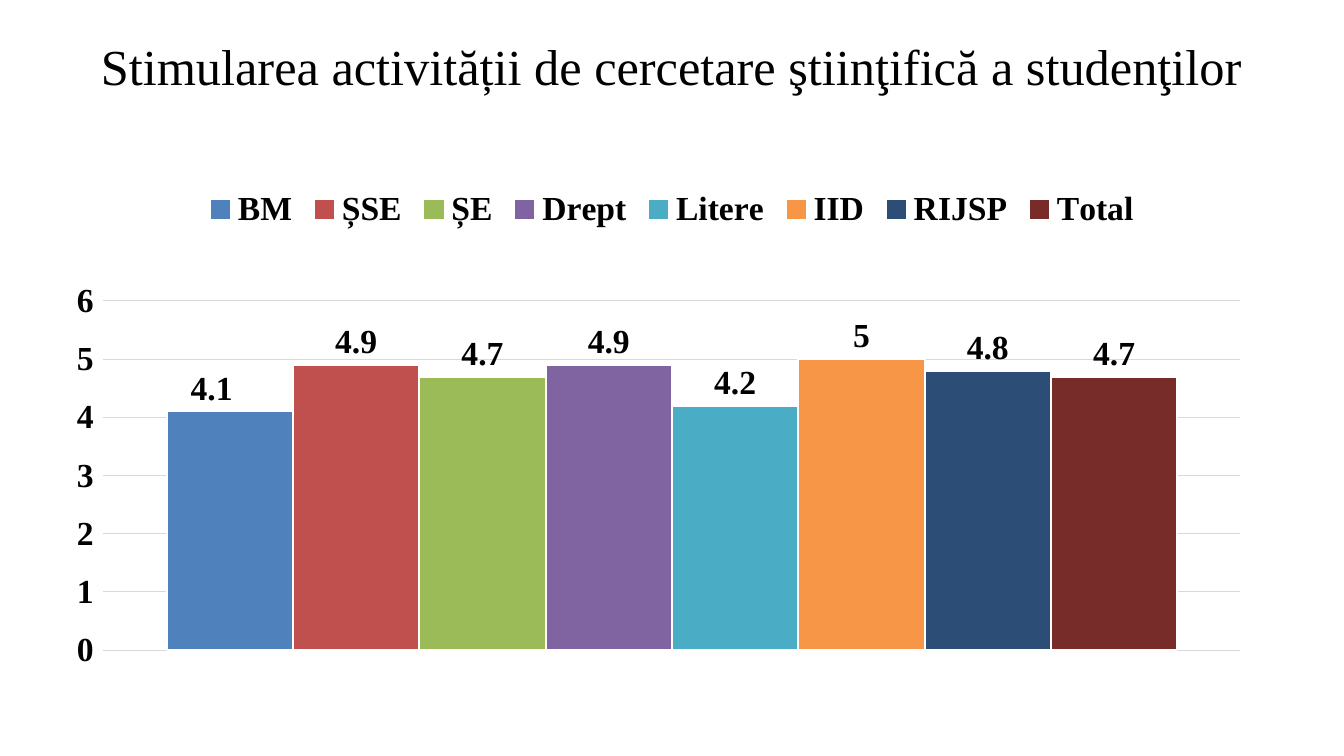
import pptx
import pptx.chart.data
import pptx.dml.color
import pptx.enum.chart
import pptx.enum.text
import pptx.oxml
import pptx.oxml.ns
import pptx.util

SLIDE_WIDTH = pptx.util.Inches(13.33)
SLIDE_HEIGHT = pptx.util.Inches(7.5)
FONT = "Times New Roman"
COLORS = {
    "text": "000000", "grid": "D9D9D9", "border": "FFFFFF",
    "BM": "4F81BD", "ȘSE": "C0504D", "ȘE": "9BBB59", "Drept": "8064A2",
    "Litere": "4BACC6", "IID": "F79646", "RIJSP": "2C4D75", "Total": "772C2A",
}
SCORES = {"BM": 4.1, "ȘSE": 4.9, "ȘE": 4.7, "Drept": 4.9,
          "Litere": 4.2, "IID": 5, "RIJSP": 4.8, "Total": 4.7}


def color(name):
    return pptx.dml.color.RGBColor.from_string(COLORS[name])


def area(left, top, width, height):
    """Turn shares of the slide into lengths."""
    return (int(left * SLIDE_WIDTH), int(top * SLIDE_HEIGHT),
            int(width * SLIDE_WIDTH), int(height * SLIDE_HEIGHT))


def style_font(font, size, bold):
    font.name = FONT
    font.size = pptx.util.Pt(size)
    font.bold = bold
    font.color.rgb = color("text")


def layout_xml(**values):
    """Build a manual layout element for a part of the chart."""
    parts = "".join(f'<c:{tag} val="{value}"/>' for tag, value in values.items())
    return pptx.oxml.parse_xml(
        f'<c:layout {pptx.oxml.ns.nsdecls("c")}>'
        f"<c:manualLayout>{parts}</c:manualLayout></c:layout>")


def add_title(slide, text):
    title = slide.shapes.title
    title.left, title.top, title.width, title.height = area(0.05, 0.04, 0.9, 1 / 6)
    frame = title.text_frame
    frame.word_wrap = True
    frame.auto_size = pptx.enum.text.MSO_AUTO_SIZE.NONE
    frame.vertical_anchor = pptx.enum.text.MSO_ANCHOR.TOP
    paragraph = frame.paragraphs[0]
    paragraph.alignment = pptx.enum.text.PP_ALIGN.CENTER
    run = paragraph.add_run()
    run.text = text
    style_font(run.font, 36, False)


def style_axes(chart):
    chart.category_axis.visible = False
    axis = chart.value_axis
    axis.minimum_scale, axis.maximum_scale, axis.major_unit = 0, 6, 1
    axis.major_tick_mark = pptx.enum.chart.XL_TICK_MARK.OUTSIDE
    axis.format.line.fill.background()
    axis.major_gridlines.format.line.color.rgb = color("grid")
    axis.major_gridlines.format.line.width = pptx.util.Pt(0.75)
    style_font(axis.tick_labels.font, 24, True)


def style_series(series):
    series.format.fill.solid()
    series.format.fill.fore_color.rgb = color(series.name)
    series.format.line.color.rgb = color("border")
    series.format.line.width = pptx.util.Pt(1.5)
    labels = series.data_labels
    labels.show_value = True
    labels.position = pptx.enum.chart.XL_LABEL_POSITION.OUTSIDE_END
    style_font(labels.font, 24, True)


def shift_first_label(chart, series, share):
    """Move a series' label sideways by a share of the chart's width."""
    label = series.points[0].data_label
    style_font(label.font, 24, True)
    label.position = pptx.enum.chart.XL_LABEL_POSITION.OUTSIDE_END
    index = chart.element.xpath(".//c:dLbl/c:idx")[0] if hasattr(chart, "element") \
        else chart._chartSpace.xpath(".//c:dLbl/c:idx")[0]
    index.addnext(layout_xml(x=share, y=0))


def add_score_chart(slide):
    data = pptx.chart.data.CategoryChartData()
    data.categories = ["1"]
    for name, score in SCORES.items():
        data.add_series(name, [score])
    chart = slide.shapes.add_chart(
        pptx.enum.chart.XL_CHART_TYPE.COLUMN_CLUSTERED,
        *area(0.05, 0.233, 0.9, 0.66), data).chart
    chart.has_title = False
    style_font(chart.font, 24, True)
    style_axes(chart)

    # Columns and their values
    plot = chart.plots[0]
    plot.gap_width = 100
    plot.overlap = 0
    plot.vary_by_categories = False
    for series in plot.series:
        style_series(series)
    shift_first_label(chart, plot.series[0], -0.015)

    # Legend above the columns
    chart.has_legend = True
    chart.legend.position = pptx.enum.chart.XL_LEGEND_POSITION.TOP
    chart.legend.include_in_layout = False
    style_font(chart.legend.font, 24, True)

    # Plot area
    plot_area = chart._chartSpace.xpath(".//c:plotArea")[0]
    for old_layout in plot_area.xpath("./c:layout"):
        plot_area.remove(old_layout)
    plot_area.insert(0, layout_xml(layoutTarget="inner", xMode="edge", yMode="edge",
                                   x=0.03, y=0.25, w=0.94, h=0.7))


def main():
    presentation = pptx.Presentation()
    presentation.slide_width = SLIDE_WIDTH
    presentation.slide_height = SLIDE_HEIGHT
    slide = presentation.slides.add_slide(presentation.slide_layouts.get_by_name("Title Only"))
    add_title(slide, "Stimularea activității de cercetare ştiinţifică a studenţilor")
    add_score_chart(slide)
    presentation.save("out.pptx")


if __name__ == "__main__":
    main()
